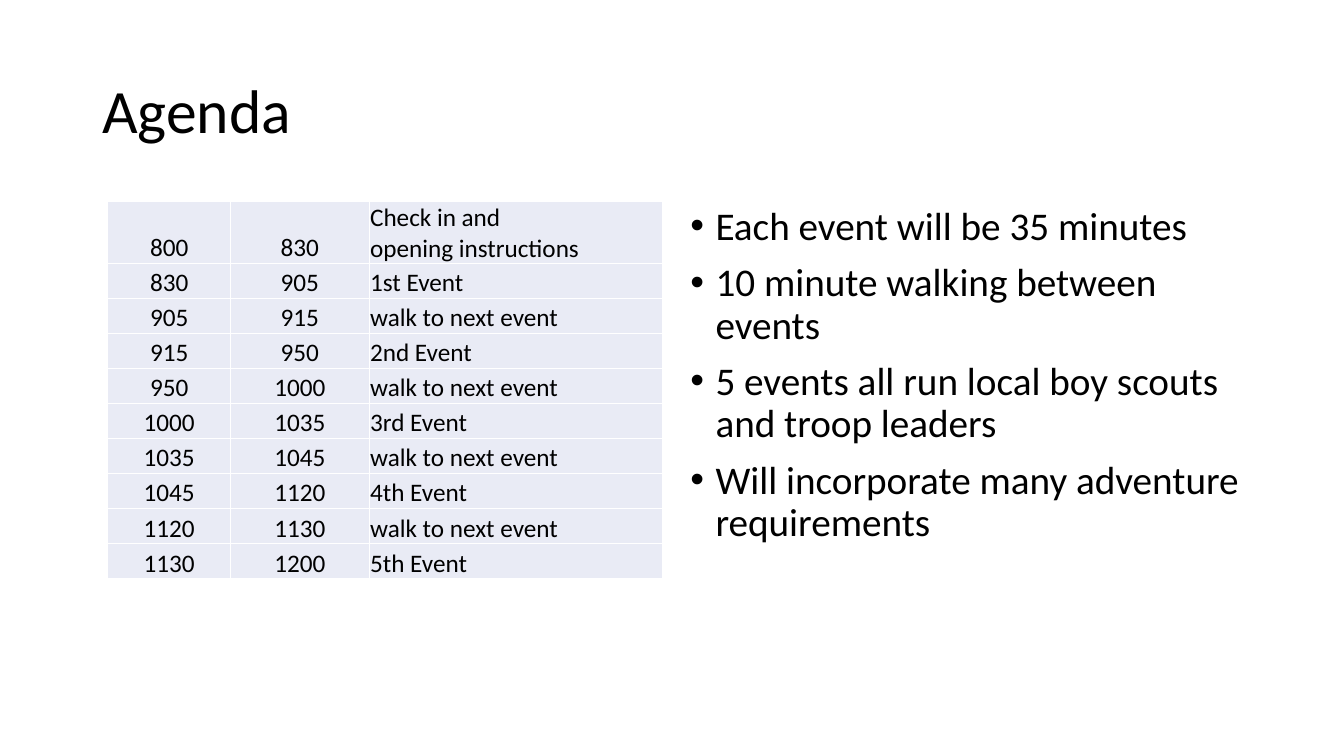
from dataclasses import dataclass
from itertools import pairwise

from lxml.etree import SubElement
from pptx import Presentation
from pptx.dml.color import RGBColor as Color
from pptx.enum.text import MSO_ANCHOR as Anchor, PP_ALIGN as Align
from pptx.oxml.ns import qn
from pptx.util import Pt


@dataclass(frozen=True)
class Theme:
    font: str = "Calibri"
    ink: Color = Color(0x00, 0x00, 0x00)
    cell_fill: Color = Color(0xE9, 0xEB, 0xF5)
    border: Color = Color(0xFF, 0xFF, 0xFF)
    title_size: float = 44
    bullet_size: float = 28
    table_size: float = 18


@dataclass(frozen=True)
class Area:
    left: float
    top: float
    width: float
    height: float

    def points(self) -> tuple:
        return Pt(self.left), Pt(self.top), Pt(self.width), Pt(self.height)


@dataclass(frozen=True)
class Session:
    start: str
    end: str
    activity: str


THEME = Theme()
TITLE_AREA = Area(66, 28.8, 828, 104.4)
TABLE_AREA = Area(77, 144, 396.7, 250.8)
BULLET_AREA = Area(486, 144, 408, 342.6)
COLUMN_WIDTHS = (87.8, 98.9, 210)
BULLET_INDENT = 18

TIMES = ("800", "830", "905", "915", "950", "1000",
         "1035", "1045", "1120", "1130", "1200")
WALK = "walk to next event"
ACTIVITIES = ("Check in and\nopening instructions", "1st Event", WALK, "2nd Event",
              WALK, "3rd Event", WALK, "4th Event", WALK, "5th Event")
SESSIONS = [Session(start, end, activity)
            for (start, end), activity in zip(pairwise(TIMES), ACTIVITIES)]
BULLETS = (
    "Each event will be 35 minutes",
    "10 minute walking between events",
    "5 events all run local boy scouts and troop leaders",
    "Will incorporate many adventure requirements",
)


def style_paragraph(para, size: float, align=Align.LEFT) -> None:
    para.alignment = align
    para.font.name = THEME.font
    para.font.size = Pt(size)
    para.font.color.rgb = THEME.ink


def add_text(page, area: Area, lines: tuple, size: float, anchor):
    frame = page.shapes.add_textbox(*area.points()).text_frame
    frame.word_wrap = True
    frame.vertical_anchor = anchor
    frame.text = "\n".join(lines)
    for para in frame.paragraphs:
        style_paragraph(para, size)
        para.line_spacing = 0.9
    return frame


def add_bullet(para) -> None:
    para.space_before = Pt(10)
    properties = para._p.get_or_add_pPr()
    properties.set("marL", str(Pt(BULLET_INDENT)))
    properties.set("indent", str(-Pt(BULLET_INDENT)))
    SubElement(properties, qn("a:buFont"), typeface="Arial")
    SubElement(properties, qn("a:buChar"), char="•")


def add_borders(cell) -> None:
    properties = cell._tc.get_or_add_tcPr()
    for side in ("lnL", "lnR", "lnT", "lnB"):
        line = SubElement(properties, qn(f"a:{side}"), w=str(Pt(1)))
        fill = SubElement(line, qn("a:solidFill"))
        SubElement(fill, qn("a:srgbClr"), val=str(THEME.border))


def fill_cell(cell, text: str, align) -> None:
    add_borders(cell)
    cell.fill.solid()
    cell.fill.fore_color.rgb = THEME.cell_fill
    cell.margin_left = cell.margin_right = cell.margin_top = Pt(0.72)
    cell.margin_bottom = Pt(0)
    cell.vertical_anchor = Anchor.BOTTOM
    cell.text = text
    for para in cell.text_frame.paragraphs:
        style_paragraph(para, THEME.table_size, align)


def add_schedule(page, sessions: list) -> None:
    table = page.shapes.add_table(
        len(sessions), len(COLUMN_WIDTHS), *TABLE_AREA.points()).table
    table.first_row = table.horz_banding = False
    for column, width in zip(table.columns, COLUMN_WIDTHS):
        column.width = Pt(width)
    for row, session in zip(table.rows, sessions):
        row.height = Pt(TABLE_AREA.height / len(sessions))
        texts = (session.start, session.end, session.activity)
        aligns = (Align.CENTER, Align.CENTER, Align.LEFT)
        for cell, text, align in zip(row.cells, texts, aligns):
            fill_cell(cell, text, align)


def main() -> None:
    deck = Presentation()
    deck.slide_width, deck.slide_height = Pt(960), Pt(540)
    page = deck.slides.add_slide(deck.slide_layouts[6])

    # Title
    add_text(page, TITLE_AREA, ("Agenda",), THEME.title_size, Anchor.MIDDLE)

    # Schedule
    add_schedule(page, SESSIONS)

    # Notes on the events
    frame = add_text(page, BULLET_AREA, BULLETS, THEME.bullet_size, Anchor.TOP)
    for para in frame.paragraphs:
        add_bullet(para)

    deck.save("out.pptx")


if __name__ == "__main__":
    main()
